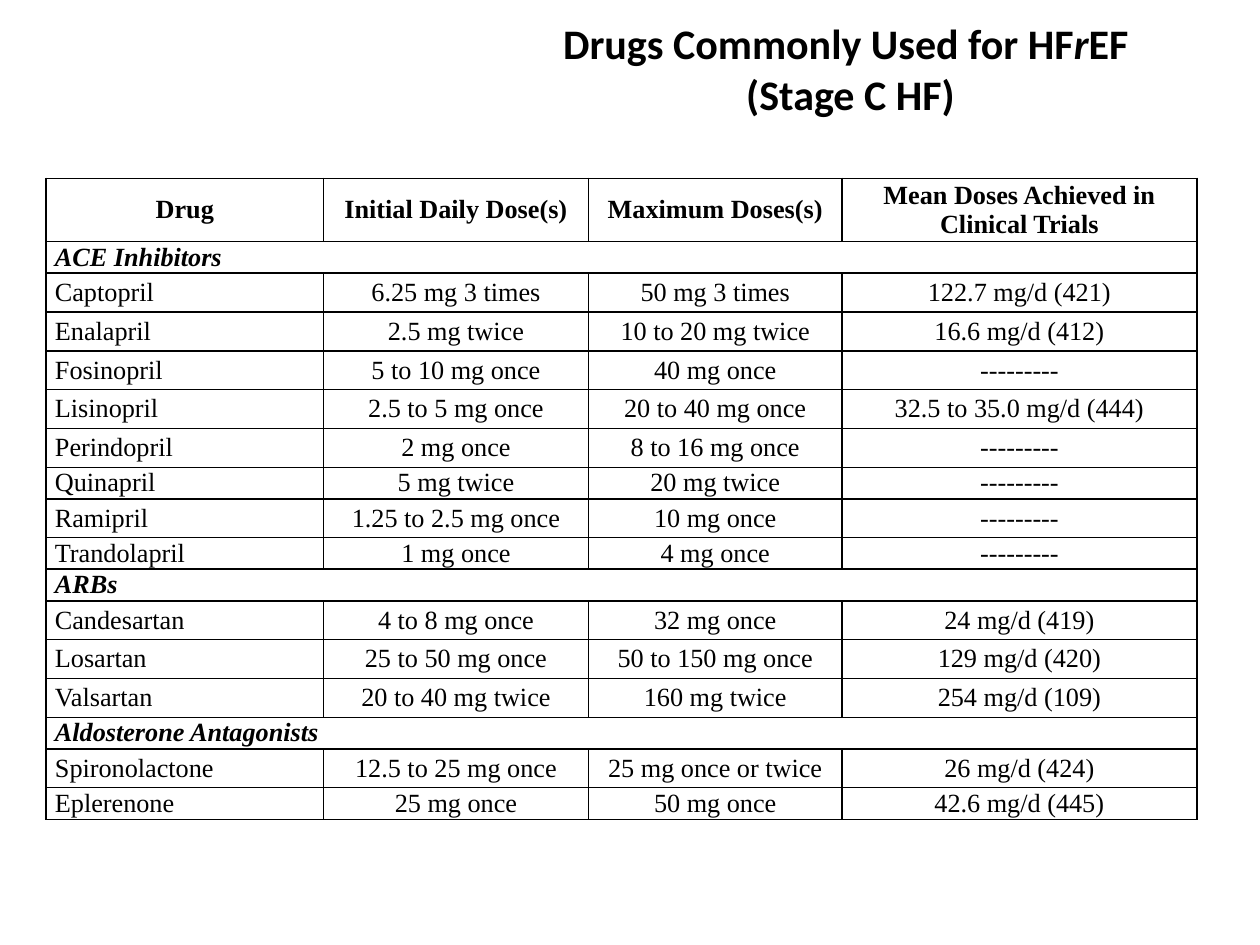
from pptx import Presentation
from pptx.dml.color import RGBColor
from pptx.enum.text import MSO_ANCHOR as Anchor, PP_ALIGN as Align
from pptx.oxml import parse_xml
from pptx.oxml.ns import nsdecls
from pptx.util import Pt

INK = "000000"
DASHES = "---------"
HEADINGS = ("Drug", "Initial Daily Dose(s)", "Maximum Doses(s)",
            "Mean Doses Achieved in Clinical Trials")
CLASSES = {
    "ACE Inhibitors": [
        ("Captopril", "6.25 mg 3 times", "50 mg 3 times", "122.7 mg/d (421)"),
        ("Enalapril", "2.5 mg twice", "10 to 20 mg twice", "16.6 mg/d (412)"),
        ("Fosinopril", "5 to 10 mg once", "40 mg once", DASHES),
        ("Lisinopril", "2.5 to 5 mg once", "20 to 40 mg once", "32.5 to 35.0 mg/d (444)"),
        ("Perindopril", "2 mg once", "8 to 16 mg once", DASHES),
        ("Quinapril", "5 mg twice", "20 mg twice", DASHES),
        ("Ramipril", "1.25 to 2.5 mg once", "10 mg once", DASHES),
        ("Trandolapril", "1 mg once", "4 mg once", DASHES),
    ],
    "ARBs": [
        ("Candesartan", "4 to 8 mg once", "32 mg once", "24 mg/d (419)"),
        ("Losartan", "25 to 50 mg once", "50 to 150 mg once", "129 mg/d (420)"),
        ("Valsartan", "20 to 40 mg twice", "160 mg twice", "254 mg/d (109)"),
    ],
    "Aldosterone Antagonists": [
        ("Spironolactone", "12.5 to 25 mg once", "25 mg once or twice", "26 mg/d (424)"),
        ("Eplerenone", "25 mg once", "50 mg once", "42.6 mg/d (445)"),
    ],
}
COLUMN_WIDTHS = (158.4, 151.6, 144.7, 202.9)
COMPACT_DRUGS = {"Quinapril", "Trandolapril", "Eplerenone"}
HEADER_HEIGHT, DRUG_HEIGHT, COMPACT_HEIGHT = 34.5, 22.2, 17.1


def color(value):
    return RGBColor.from_string(value)


def apply(target, values):
    for name, value in values.items():
        setattr(target, name, value)


class DoseSlide:
    title_font = {"name": "Calibri", "size": Pt(24)}
    cell_font = {"name": "Times New Roman", "size": Pt(15)}
    cell_frame = {"margin_left": Pt(5), "margin_right": Pt(5), "margin_top": 0,
                  "margin_bottom": 0, "vertical_anchor": Anchor.MIDDLE}

    def __init__(self, deck):
        self.slide = deck.slides.add_slide(deck.slide_layouts[6])

    def words(self, paragraph, text, font, bold=False, italic=False):
        run = paragraph.add_run()
        run.text = text
        apply(run.font, font | {"bold": bold, "italic": italic})
        run.font.color.rgb = color(INK)

    def title(self, left, top, width, height):
        frame = self.slide.shapes.add_textbox(
            Pt(left), Pt(top), Pt(width), Pt(height)).text_frame
        apply(frame, {"word_wrap": True, "vertical_anchor": Anchor.MIDDLE})
        heading = frame.paragraphs[0]
        heading.alignment = Align.CENTER
        self.words(heading, "Drugs Commonly Used for HF", self.title_font, bold=True)
        self.words(heading, "r", self.title_font, bold=True, italic=True)
        self.words(heading, "EF ", self.title_font, bold=True)
        heading.add_line_break()
        self.words(heading, "(Stage C HF)", self.title_font, bold=True)

    def border(self, cell):
        properties = cell._tc.get_or_add_tcPr()
        for side in "LRTB":
            properties.append(parse_xml(
                f'<a:ln{side} {nsdecls("a")} w="{Pt(1)}"><a:solidFill>'
                f'<a:srgbClr val="{INK}"/></a:solidFill></a:ln{side}>'))

    def cell(self, cell, text, align, bold=False, italic=False):
        apply(cell, self.cell_frame)
        self.border(cell)
        cell.fill.background()
        paragraph = cell.text_frame.paragraphs[0]
        paragraph.alignment = align
        self.words(paragraph, text, self.cell_font, bold, italic)

    def table(self, left, top, rows):
        heights = [height for _, height in rows]
        table = self.slide.shapes.add_table(
            len(rows), len(COLUMN_WIDTHS), Pt(left), Pt(top),
            Pt(sum(COLUMN_WIDTHS)), Pt(sum(heights))).table
        apply(table, {"first_row": False, "horz_banding": False})
        for column, width in zip(table.columns, COLUMN_WIDTHS):
            column.width = Pt(width)
        for index, (texts, height) in enumerate(rows):
            table.rows[index].height = Pt(height)
            cells = list(table.rows[index].cells)
            if len(texts) == 1:
                cells[0].merge(cells[-1])
                self.cell(cells[0], texts[0], Align.LEFT, bold=True, italic=True)
                for covered in cells[1:]:
                    self.border(covered)
                    covered.fill.background()
                continue
            is_header = index == 0
            for number, (cell, text) in enumerate(zip(cells, texts)):
                align = Align.CENTER if is_header or number else Align.LEFT
                self.cell(cell, text, align, bold=is_header)


def dose_rows():
    rows = [(HEADINGS, HEADER_HEIGHT)]
    for drug_class, drugs in CLASSES.items():
        rows.append(((drug_class,), COMPACT_HEIGHT))
        for drug in drugs:
            compact = drug[0] in COMPACT_DRUGS
            rows.append((drug, COMPACT_HEIGHT if compact else DRUG_HEIGHT))
    return rows


def main():
    deck = Presentation()
    apply(deck, {"slide_width": Pt(720), "slide_height": Pt(540)})
    doses = DoseSlide(deck)
    doses.title(252, 6, 468, 66)
    doses.table(26.4, 102, dose_rows())
    deck.save("out.pptx")


if __name__ == "__main__":
    main()
